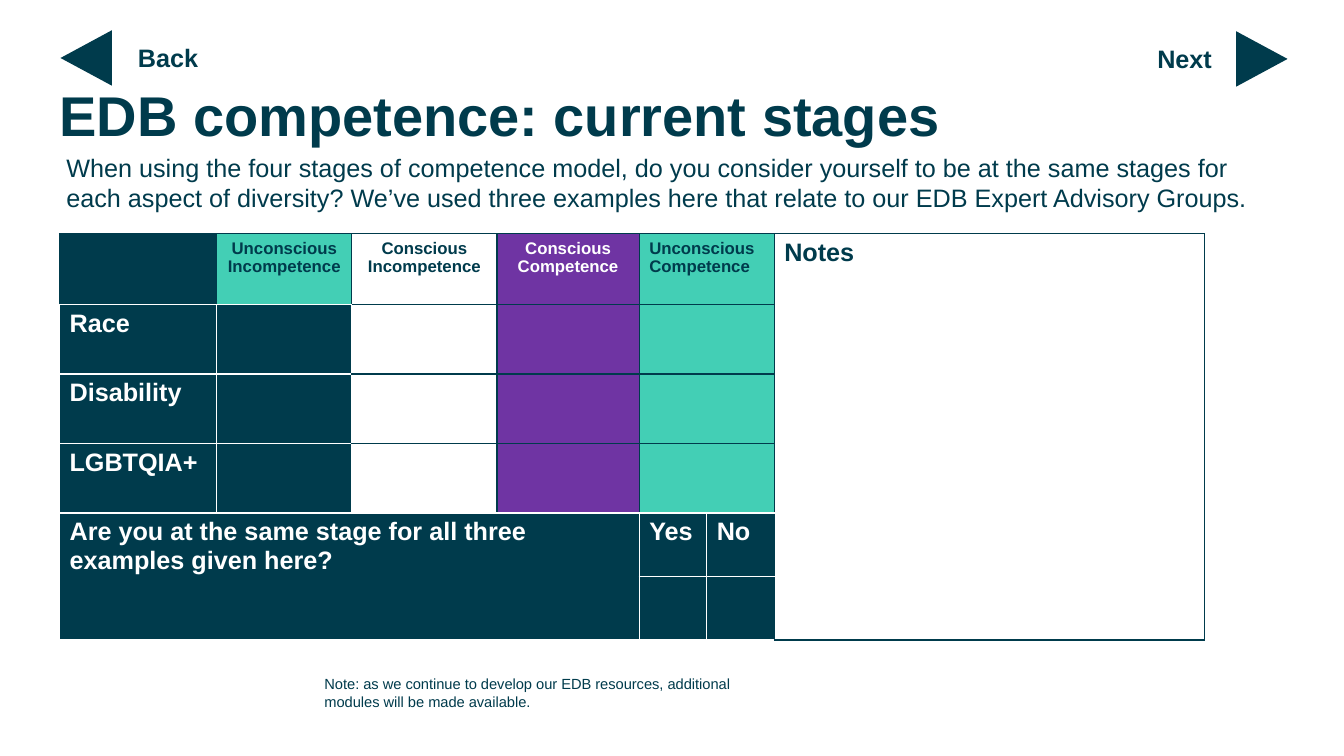
import pptx
import pptx.dml.color
import pptx.enum.shapes
import pptx.enum.text
import pptx.oxml
import pptx.util
from pptx.util import Inches

RGBColor = pptx.dml.color.RGBColor
TEAL = RGBColor(0x00, 0x3B, 0x4C)
MINT = RGBColor(0x43, 0xCF, 0xB5)
PURPLE = RGBColor(0x6F, 0x34, 0xA3)
WHITE = RGBColor(0xFF, 0xFF, 0xFF)

LEFT = pptx.enum.text.PP_ALIGN.LEFT
CENTER = pptx.enum.text.PP_ALIGN.CENTER
EDGE_COLORS = {"D": TEAL, "W": WHITE}
DRAWING_NS = "http://schemas.openxmlformats.org/drawingml/2006/main"

COLUMN_WIDTHS = [1.56, 1.34, 1.44, 1.41, 0.67, 0.67, 4.27]
ROW_HEIGHTS = [0.7, 0.69, 0.69, 0.69, 0.63, 0.63]
# First row, first column, last row, last column
MERGES = [(row, 4, row, 5) for row in range(4)] + [(4, 0, 5, 3), (0, 6, 5, 6)]

HEADER_FILLS = [TEAL, MINT, WHITE, PURPLE, MINT, MINT, WHITE]
STAGE_FILLS = [TEAL, TEAL, WHITE, PURPLE, MINT, MINT, WHITE]
ANSWER_FILLS = [TEAL] * 6 + [WHITE]
ROW_FILLS = [HEADER_FILLS] + [STAGE_FILLS] * 3 + [ANSWER_FILLS] * 2

# Edge colours of each cell: left, right, top, bottom (D dark, W white)
HEADER_EDGES = ["DDDW"] * 2 + ["DDDD"] * 5
STAGE_EDGES = ["WWWW", "WWWW", "WDDD"] + ["DDDD"] * 4
LAST_STAGE_EDGES = ["WWWW", "WWWW", "WDDW"] + ["DDDW"] * 3 + ["DDDD"]
ANSWER_EDGES = ["WWWW"] * 6 + ["DDDD"]
ROW_EDGES = [HEADER_EDGES, STAGE_EDGES, STAGE_EDGES, LAST_STAGE_EDGES,
             ANSWER_EDGES, ANSWER_EDGES]

# Row, column, text, size, colour, alignment
CELL_TEXTS = [
    (0, 1, "Unconscious Incompetence", 12, TEAL, CENTER),
    (0, 2, "Conscious Incompetence", 12, TEAL, CENTER),
    (0, 3, "Conscious Competence", 12, WHITE, CENTER),
    (0, 4, "Unconscious Competence", 12, TEAL, LEFT),
    (0, 6, "Notes", 18, TEAL, LEFT),
    (1, 0, "Race", 18, WHITE, LEFT),
    (2, 0, "Disability", 18, WHITE, LEFT),
    (3, 0, "LGBTQIA+", 18, WHITE, LEFT),
    (4, 0, "Are you at the same stage for all three examples given here?",
     18, WHITE, LEFT),
    (4, 4, "Yes", 18, WHITE, LEFT),
    (4, 5, "No", 18, WHITE, LEFT),
]


def set_text(frame, text, size, color, bold):
    para = frame.paragraphs[0]
    para.text = text
    para.font.name = "Arial"
    para.font.size = pptx.util.Pt(size)
    para.font.bold = bold
    para.font.color.rgb = color
    return para


def add_text(slide, text, left, top, width, height, size, bold=False):
    box = slide.shapes.add_textbox(
        Inches(left), Inches(top), Inches(width), Inches(height))
    box.text_frame.word_wrap = True
    set_text(box.text_frame, text, size, TEAL, bold)
    return box.text_frame


def add_title(slide, text):
    frame = add_text(slide, text, 0.59, 0.87, 12.74, 0.79, 40, bold=True)
    frame.margin_left = frame.margin_right = 0
    frame.margin_top = frame.margin_bottom = 0
    frame.paragraphs[0].line_spacing = 0.9


def add_arrow(slide, left, top, rotation):
    arrow = slide.shapes.add_shape(
        pptx.enum.shapes.MSO_SHAPE.ISOSCELES_TRIANGLE,
        Inches(left), Inches(top), Inches(0.55), Inches(0.51))
    arrow.rotation = rotation
    arrow.shadow.inherit = False
    arrow.fill.solid()
    arrow.fill.fore_color.rgb = TEAL
    arrow.line.fill.background()


def set_borders(cell, edges):
    """Draw 1 pt borders; edges gives left, right, top, bottom colours."""
    properties = cell._tc.get_or_add_tcPr()
    for index, (side, code) in enumerate(zip("LRTB", edges)):
        properties.insert(index, pptx.oxml.parse_xml(
            f'<a:ln{side} xmlns:a="{DRAWING_NS}" w="12700"><a:solidFill>'
            f'<a:srgbClr val="{EDGE_COLORS[code]}"/></a:solidFill></a:ln{side}>'))


def add_stage_table(slide):
    table = slide.shapes.add_table(
        len(ROW_HEIGHTS), len(COLUMN_WIDTHS), Inches(0.59), Inches(2.32),
        Inches(sum(COLUMN_WIDTHS)), Inches(sum(ROW_HEIGHTS))).table
    table.first_row = table.horz_banding = False
    for column, width in zip(table.columns, COLUMN_WIDTHS):
        column.width = Inches(width)
    for row, height, fills, edges in zip(
            table.rows, ROW_HEIGHTS, ROW_FILLS, ROW_EDGES):
        row.height = Inches(height)
        for cell, fill, cell_edges in zip(row.cells, fills, edges):
            set_borders(cell, cell_edges)
            cell.fill.solid()
            cell.fill.fore_color.rgb = fill
    for top, left, bottom, right in MERGES:
        table.cell(top, left).merge(table.cell(bottom, right))
    for row, column, text, size, color, alignment in CELL_TEXTS:
        frame = table.cell(row, column).text_frame
        set_text(frame, text, size, color, True).alignment = alignment


def main():
    deck = pptx.Presentation()
    deck.slide_width = Inches(13.33)
    deck.slide_height = Inches(7.5)
    slide = deck.slides.add_slide(deck.slide_layouts[6])

    add_text(slide, "When using the four stages of competence model, do you "
             "consider yourself to be at the same stages for each aspect of "
             "diversity? We’ve used three examples here that relate to our "
             "EDB Expert Advisory Groups.", 0.56, 1.46, 12, 0.71, 18)
    add_stage_table(slide)
    add_title(slide, "EDB competence: current stages")
    add_arrow(slide, 0.58, 0.32, 270)
    add_text(slide, "Back", 1.27, 0.37, 0.84, 0.4, 18, bold=True)
    add_arrow(slide, 12.24, 0.33, 90)
    add_text(slide, "Next", 11.38, 0.38, 0.84, 0.4, 18, bold=True)
    add_text(slide, "Note: as we continue to develop our EDB resources, "
             "additional modules will be made available.",
             3.12, 6.65, 4.57, 0.45, 10.5)
    deck.save("out.pptx")


if __name__ == "__main__":
    main()
